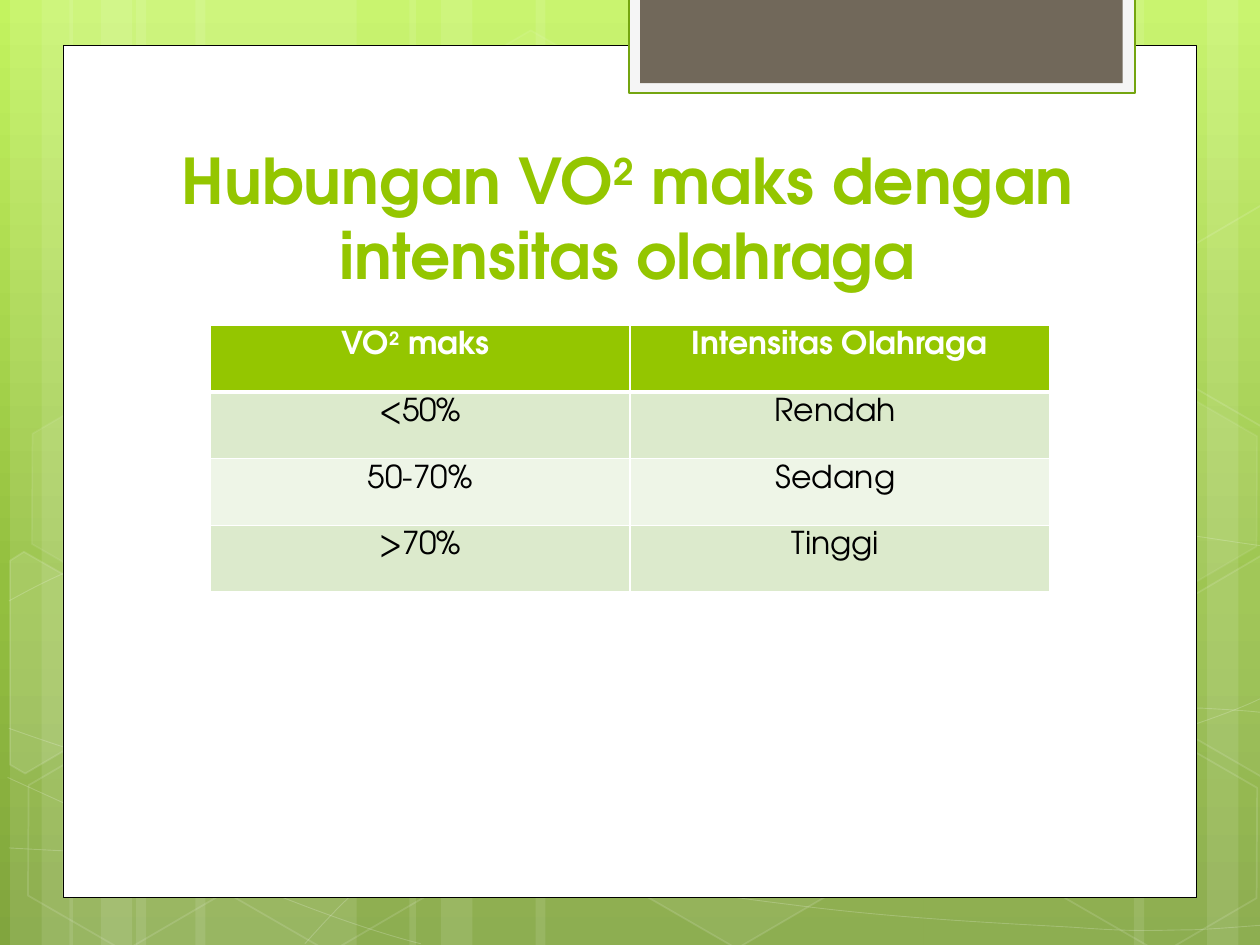
from copy import deepcopy

from lxml.etree import SubElement
from pptx import Presentation
from pptx.dml.color import RGBColor
from pptx.enum.shapes import MSO_SHAPE as Preset
from pptx.enum.text import MSO_ANCHOR as Anchor, PP_ALIGN as Align
from pptx.oxml import parse_xml
from pptx.oxml.ns import nsdecls, qn
from pptx.util import Inches, Pt

# Content: a heading is a list of (text, is superscript)
TITLE = [("Hubungan VO", False), ("2", True), (" maks dengan intensitas olahraga", False)]
TABLE = [
    ([("VO", False), ("2", True), (" maks ", False)], [("Intensitas Olahraga", False)]),
    ([("<50%", False)], [("Rendah ", False)]),
    ([("50-70%", False)], [("Sedang ", False)]),
    ([(">70%", False)], [("Tinggi ", False)]),
]

# Look
FONT = "TeX Gyre Adventor"
WHITE, BLACK, GREEN = "FFFFFF", "000000", "94C600"
ROW_FILLS = [GREEN, "DCEACC", "EEF5E7", "DCEACC"]
HEADER_BORDERS = {"L": 1, "R": 1, "T": 1, "B": 3}
BACKDROP = [(0, "C3F35F"), (0.62, "93BF3F"), (1, "81A53E")]

# Backdrop parts, in inches
STRIPES = [  # left, width
    (1.08, 1.75), (0.08, 0.5), (0.33, 0.83), (1.55, 1.75), (0.55, 0.5), (0.8, 0.83),
    (7.33, 1.75), (9.58, 0.5), (9, 0.83), (4.25, 3.08), (3.25, 0.5), (3.5, 0.83),
]
CURVES = [  # start point, then three points for each cubic segment
    [(0.07, 6.73), (0.61, 6.76), (1.15, 6.79), (1.9, 6.78), (2.65, 6.77), (3.58, 6.75),
     (4.58, 6.65), (5.58, 6.55), (7, 6.36), (7.92, 6.17), (8.83, 5.98), (9.77, 5.68),
     (10.07, 5.51)],
    [(0.07, 4.77), (0.36, 4.61), (0.65, 4.46), (1.21, 4.31), (1.78, 4.16), (2.59, 3.94),
     (3.47, 3.87), (4.36, 3.8), (5.44, 3.79), (6.54, 3.87), (7.64, 3.95), (9.47, 4.26),
     (10.07, 4.34)],
    [(0.06, 6.17), (1.27, 6.72), (2.47, 7.27), (3.34, 7.49)],
    [(0.07, 5.78), (0.38, 5.89), (0.7, 6), (1.28, 6.16), (1.86, 6.31), (2.73, 6.56),
     (3.57, 6.73), (4.4, 6.9), (5.45, 7.08), (6.28, 7.18), (7.11, 7.29), (8, 7.33),
     (8.53, 7.36), (9.05, 7.4), (9.19, 7.38), (9.45, 7.38), (9.71, 7.37), (9.89, 7.35),
     (10.07, 7.34)],
    [(2.42, 7.49), (2.6, 7.29), (2.78, 7.09), (3.02, 6.91), (3.26, 6.73), (3.6, 6.53),
     (3.88, 6.39), (4.16, 6.25), (4.33, 6.19), (4.7, 6.09), (5.06, 5.99), (5.73, 5.85),
     (6.08, 5.78), (6.44, 5.71), (6.49, 5.71), (6.8, 5.69), (7.11, 5.66), (7.6, 5.63),
     (7.94, 5.62), (8.29, 5.61), (8.86, 5.62), (8.86, 5.62), (9.08, 5.62), (9.31, 5.62),
     (9.53, 5.62), (9.71, 5.63), (9.88, 5.64), (9.97, 5.65), (10.06, 5.66), (10.03, 5.65),
     (10.06, 5.66)],
]
HEXAGONS = [  # left, top, fill opacity (0 is none), line opacity
    (3.34, 0.36, 4, 8), (4.97, 5.89, 6, 12), (0.11, 5.91, 0, 12), (0.14, 3.12, 7, 8),
    (1.74, 5.92, 0, 12), (7.53, 4.53, 10, 12), (8.34, 5.93, 0, 12), (8.34, 3.14, 7, 8),
]
RIGHT_CUT = [(9.26, 2.07), (10.01, 1.63), (10.1, 1.68), (10.09, 3.35), (10.02, 3.39), (9.26, 2.95)]
CUT_HEXAGONS = [  # outline, fill opacity
    ([(0.08, 4.45), (0.19, 4.38), (0.96, 4.82), (0.95, 5.7), (0.2, 6.14), (0.08, 6.07)], 10),
    ([(x, y + 2.78) for x, y in RIGHT_CUT], 4),
    (RIGHT_CUT, 0),
]
PANELS = [  # left, top, width, height, fill, line colour, line width
    (0.5, 0.36, 9, 6.76, WHITE, BLACK, 0.5),
    (4.99, -0.02, 4.02, 0.76, "F5F5F5", "74A510", 1.25),
    (5.08, -0.02, 3.83, 0.68, "71685A", None, 0),
]


def rgb(colour):
    return RGBColor.from_string(colour)


def set_solid(fill, colour, opacity):
    if not colour or not opacity:
        fill.background()
        return
    fill.solid()
    fill.fore_color.rgb = rgb(colour)
    if opacity < 100:
        solid = fill._xPr.find(qn("a:solidFill"))
        SubElement(solid[0], qn("a:alpha")).set("val", str(opacity * 1000))


def paint(shape, fill, opacity=100, line=None, width=0, line_opacity=100):
    shape.shadow.inherit = False
    set_solid(shape.fill, fill, opacity)
    set_solid(shape.line.fill, line, line_opacity)
    if line:
        shape.line.width = Pt(width)


def add_preset(shapes, kind, *box):
    return shapes.add_shape(kind, *map(Inches, box))


def add_outline(shapes, points, close):
    scaled = [(Inches(x), Inches(y)) for x, y in points]
    builder = shapes.build_freeform(*scaled[0], scale=1.0)
    builder.add_line_segments(scaled[1:], close=close)
    return builder.convert_to_shape()


def add_curve(shapes, points):
    shape = add_outline(shapes, points, False)
    outline = shape._element.find(".//" + qn("a:path"))
    segments = outline.findall(qn("a:lnTo"))
    for i in range(0, len(segments), 3):  # each three points become one cubic segment
        cubic = SubElement(outline, qn("a:cubicBezTo"))
        for segment in segments[i:i + 3]:
            cubic.append(segment[0])
            outline.remove(segment)
    return shape


def write(frame, runs, size, colour, bold):
    paragraph = frame.paragraphs[0]
    paragraph.alignment = Align.CENTER
    for text, superscript in runs:
        run = paragraph.add_run()
        run.text = text
        for name, value in {"name": FONT, "size": Pt(size), "bold": bold}.items():
            setattr(run.font, name, value)
        run.font.color.rgb = rgb(colour)
        if superscript:
            run.font._element.set("baseline", "30000")


def add_borders(cell, widths):
    props = cell._tc.get_or_add_tcPr()
    for i, (side, width) in enumerate(widths.items()):
        props.insert(i, parse_xml(
            f'<a:ln{side} {nsdecls("a")} w="{Pt(width)}"><a:solidFill>'
            f'<a:srgbClr val="{WHITE}"/></a:solidFill></a:ln{side}>'))


def add_backdrop(slide):
    fill = slide.background.fill
    fill.gradient()
    fill.gradient_angle = 270
    stop_list = slide._element.find(".//" + qn("a:gsLst"))
    stop_list.append(deepcopy(stop_list[-1]))
    for stop, (position, colour) in zip(fill.gradient_stops, BACKDROP):
        stop.position = position
        stop.color.rgb = rgb(colour)

    shapes = slide.shapes
    for left, width in STRIPES:
        paint(add_preset(shapes, Preset.RECTANGLE, left, 0, width, 7.5), WHITE, 10)
    for curve in CURVES:
        paint(add_curve(shapes, curve), None, 0, WHITE, 0.5, 20)
    for left, top, opacity, line_opacity in HEXAGONS:
        hexagon = add_preset(shapes, Preset.HEXAGON, left, top, 1.75, 1.52)
        hexagon.rotation = 30
        hexagon.adjustments[0], hexagon.adjustments[1] = 0.285, 1.155
        paint(hexagon, WHITE, opacity, WHITE, 1, line_opacity)
    for outline, opacity in CUT_HEXAGONS:
        paint(add_outline(shapes, outline, True), WHITE, opacity, WHITE, 1, 12)
    for *box, colour, line, width in PANELS:
        paint(add_preset(shapes, Preset.RECTANGLE, *box), colour, 100, line, width)


def add_intensity_table(slide):
    box = map(Inches, (1.67, 2.58, 6.66, 2.12))
    table = slide.shapes.add_table(len(TABLE), len(TABLE[0]), *box).table
    for r, row in enumerate(TABLE):
        header = r == 0
        for c, runs in enumerate(row):
            cell = table.cell(r, c)
            cell.fill.solid()
            cell.fill.fore_color.rgb = rgb(ROW_FILLS[r])
            if header:
                add_borders(cell, HEADER_BORDERS)
            write(cell.text_frame, runs, 18, WHITE if header else BLACK, header)


def add_title(slide):
    title = slide.shapes.title
    position = {"left": 1.14, "top": 1.12, "width": 7.68, "height": 1.25}
    for name, value in position.items():
        setattr(title, name, Inches(value))
    title.text_frame.vertical_anchor = Anchor.BOTTOM
    write(title.text_frame, TITLE, 36, GREEN, True)
    slide.shapes._spTree.append(title._element)  # bring in front of the panels


def main():
    deck = Presentation()
    deck.slide_width, deck.slide_height = Inches(10), Inches(7.5)
    slide = deck.slides.add_slide(deck.slide_layouts[5])
    add_backdrop(slide)
    add_intensity_table(slide)
    add_title(slide)
    deck.save("out.pptx")


if __name__ == "__main__":
    main()
